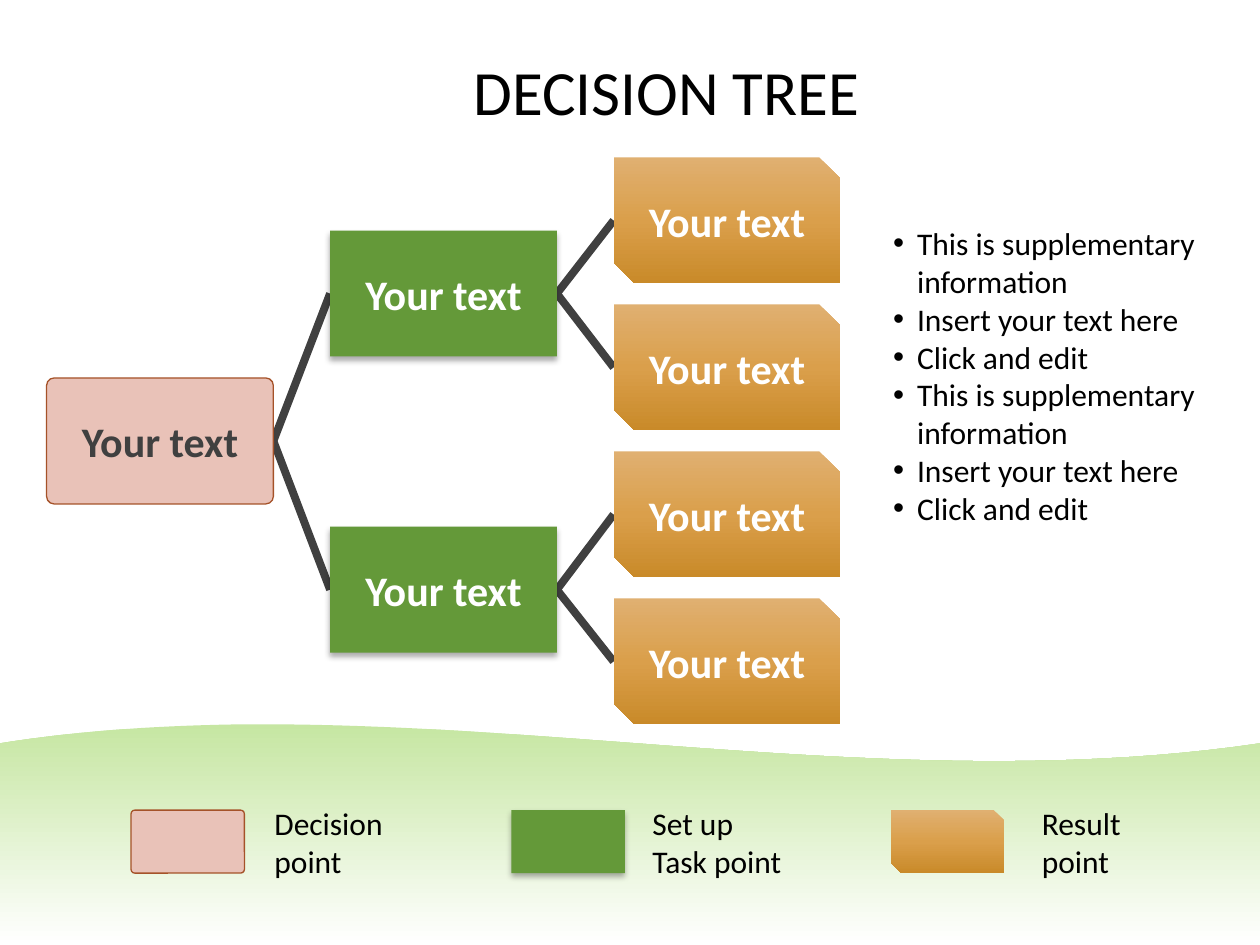
from pptx import Presentation
from pptx.dml.color import RGBColor
from pptx.enum.shapes import MSO_CONNECTOR as Link, MSO_SHAPE as Shape
from pptx.enum.text import MSO_ANCHOR as Anchor, MSO_AUTO_SIZE as Fit, PP_ALIGN as Align
from pptx.oxml.ns import qn
from pptx.util import Inches, Pt
from lxml.etree import SubElement

GREEN, DARK, WHITE = "649939", "404040", "FFFFFF"
AMBER = [(0, "E0B071"), (50, "DA9F4B"), (100, "C98A29")]
MEADOW = [(0, "C6E6A2"), (100, WHITE)]
NODE_WIDTH, NODE_HEIGHT = 1.8, 1


def color(value):
    return RGBColor.from_string(value)


def write(frame, text, size=18, ink="000000", bold=False, align=Align.LEFT,
          bullet=False, spacing=None):
    """Fill a text frame, one paragraph per line of text."""
    for index, line in enumerate(text.split("\n")):
        para = frame.add_paragraph() if index else frame.paragraphs[0]
        para.alignment = align
        if spacing:
            para.line_spacing = spacing
        if bullet:
            props = para._p.get_or_add_pPr()
            props.set("marL", str(Inches(0.19)))
            props.set("indent", str(Inches(-0.19)))
            SubElement(props, qn("a:buFont"), typeface="Arial")
            SubElement(props, qn("a:buChar"), char="•")
        span = para.add_run()
        span.text = line
        span.font.name = "Calibri"
        span.font.size = Pt(size)
        span.font.bold = bold
        span.font.color.rgb = color(ink)


class TreeSlide:
    def __init__(self, deck):
        self.page = deck.slides.add_slide(deck.slide_layouts[6])

    def gradient(self, shape, stops):
        shape.fill.gradient()
        shape.fill.gradient_angle = 270
        stop_list = shape._element.spPr.find(qn("a:gradFill")).find(qn("a:gsLst"))
        stop_list.clear()
        for position, value in stops:
            stop = SubElement(stop_list, qn("a:gs"), pos=str(position * 1000))
            SubElement(stop, qn("a:srgbClr"), val=value)

    def shadow(self, shape):
        effects = shape._element.spPr.find(qn("a:effectLst"))
        outer = SubElement(effects, qn("a:outerShdw"), blurRad=str(Pt(3.5)),
                           dist=str(Pt(2.2)), dir="5400000", rotWithShape="0")
        tint = SubElement(outer, qn("a:srgbClr"), val="000000")
        SubElement(tint, qn("a:alpha"), val="32000")

    def hill(self):
        """Wave along the foot of the page, made of two Bézier curves."""
        curves = [[(0, 5.9), (0.62, 5.8), (1.25, 5.76), (1.88, 5.75)],
                  [(1.88, 5.75), (4.58, 5.72), (7.29, 6.3), (10, 5.9)]]
        steps = 40
        points = []
        for curve in curves:
            for step in range(1, steps + 1):
                t = step / steps
                weights = ((1 - t) ** 3, 3 * t * (1 - t) ** 2, 3 * t * t * (1 - t), t ** 3)
                points.append([Inches(sum(w * p[axis] for w, p in zip(weights, curve)))
                               for axis in (0, 1)])
        points += [(Inches(10), Inches(7.5)), (0, Inches(7.5))]
        builder = self.page.shapes.build_freeform(0, Inches(5.9))
        builder.add_line_segments(points, close=True)
        shape = builder.convert_to_shape()
        shape.shadow.inherit = False
        shape.line.fill.background()
        self.gradient(shape, MEADOW)

    def branch(self, start, end):
        line = self.page.shapes.add_connector(
            Link.STRAIGHT, *(Inches(value) for value in start + end))
        line.line.color.rgb = color(DARK)
        line.line.width = Pt(4.5)
        SubElement(line._element.spPr, qn("a:effectLst"))

    def node(self, kind, left, top, width=NODE_WIDTH, height=NODE_HEIGHT, text=""):
        preset = {"decision": Shape.ROUNDED_RECTANGLE, "task": Shape.RECTANGLE,
                  "result": Shape.SNIP_2_DIAG_RECTANGLE}[kind]
        shape = self.page.shapes.add_shape(
            preset, Inches(left), Inches(top), Inches(width), Inches(height))
        shape.shadow.inherit = False
        shape.line.fill.background()
        if kind == "result":
            self.gradient(shape, AMBER)
        else:
            shape.fill.solid()
            shape.fill.fore_color.rgb = color(GREEN if kind == "task" else "E9C2B8")
        if kind == "task":
            self.shadow(shape)
        if kind == "decision":
            shape.adjustments[0] = 0.06
            shape.line.color.rgb = color("A55229")
            shape.line.width = Pt(0.75)
        if text:
            shape.text_frame.vertical_anchor = Anchor.MIDDLE
            write(shape.text_frame, text, size=24, bold=True, align=Align.CENTER,
                  ink=DARK if kind == "decision" else WHITE)

    def text(self, left, top, width, height, text, anchor=Anchor.TOP, wrap=True, **style):
        box = self.page.shapes.add_textbox(
            Inches(left), Inches(top), Inches(width), Inches(height))
        frame = box.text_frame
        frame.word_wrap = wrap
        frame.auto_size = Fit.NONE if wrap else Fit.SHAPE_TO_FIT_TEXT
        frame.vertical_anchor = anchor
        write(frame, text, **style)


def main():
    deck = Presentation()
    deck.slide_width, deck.slide_height = Inches(10), Inches(7.5)
    slide = TreeSlide(deck)

    # Background and title
    slide.hill()
    slide.text(1.04, -0.12, 8.5, 1.75, "DECISION TREE", anchor=Anchor.MIDDLE,
               size=36, align=Align.CENTER, spacing=0.9)

    # Tree: top-left corners of the nodes, level by level
    root = (0.37, 3)
    tasks = [(2.62, 1.83), (2.62, 4.18)]
    results = [(4.87, 1.25 + 3.5 / 3 * row) for row in range(4)]
    links = [(root, task) for task in tasks]
    links += [(tasks[row // 2], result) for row, result in enumerate(results)]
    for (left, top), (child_left, child_top) in links:
        slide.branch((left + NODE_WIDTH, top + NODE_HEIGHT / 2),
                     (child_left, child_top + NODE_HEIGHT / 2))
    for kind, spots in (("decision", [root]), ("task", tasks), ("result", results)):
        for left, top in spots:
            slide.node(kind, left, top, text="Your text")

    # Supplementary notes
    notes = ["This is supplementary information", "Insert your text here", "Click and edit"]
    slide.text(6.99, 1.73, 2.67, 3.49, "\n".join(notes * 2), bullet=True)

    # Legend
    legend = [("decision", 1.04, 2.08, 1.07, "Decision\npoint"),
              ("task", 4.06, 5.08, 1.24, "Set up\nTask point"),
              ("result", 7.07, 8.17, 0.83, "Result\npoint")]
    for kind, left, label_left, label_width, label in legend:
        slide.node(kind, left, 6.43, NODE_WIDTH / 2, NODE_HEIGHT / 2)
        slide.text(label_left, 6.33, label_width, 0.71, label, wrap=False)

    deck.save("out.pptx")


if __name__ == "__main__":
    main()
